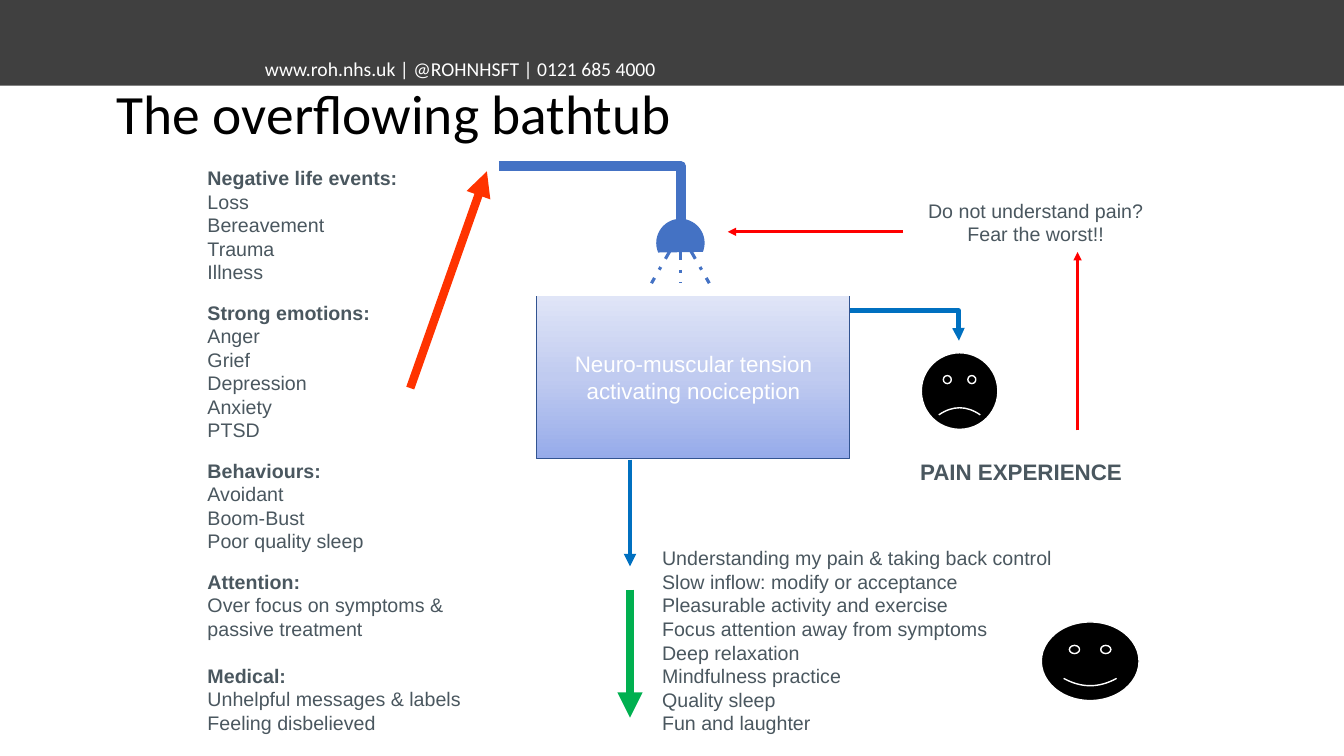
"""Build the overflowing bathtub slide about pain, its causes and its relief."""
import pptx
import pptx.dml.color
import pptx.enum.dml
import pptx.enum.shapes
import pptx.enum.text
import pptx.oxml.ns
import pptx.util
import copy
import itertools
import lxml.etree

THEME = {
    "colours": {
        "band": "404040", "white": "FFFFFF", "black": "000000", "slate": "4A575F",
        "shower": "4472C4", "water": "0070C0", "fear": "FF0000", "inflow": "FF3300",
        "relief": "00B050", "tub edge": "325491",
    },
    "tub": ["96ABEA", "C0CBF0", "E0E5F7"],
    "type": {
        "title": {"name": "Calibri", "size": pptx.util.Pt(39.6), "bold": False},
        "contact": {"name": "Calibri", "size": pptx.util.Pt(14), "bold": False},
        "label": {"name": "Arial", "size": pptx.util.Pt(16), "bold": False},
        "strong label": {"name": "Arial", "size": pptx.util.Pt(16), "bold": True},
        "body": {"name": "Arial", "size": pptx.util.Pt(14), "bold": False},
        "heading": {"name": "Arial", "size": pptx.util.Pt(14), "bold": True},
    },
}
COLOUR = {part: pptx.dml.color.RGBColor.from_string(code)
          for part, code in THEME["colours"].items()}
SHAPE = pptx.enum.shapes.MSO_SHAPE
CONNECTOR = pptx.enum.shapes.MSO_CONNECTOR
ALIGN = pptx.enum.text.PP_ALIGN
ANCHOR = pptx.enum.text.MSO_ANCHOR
qn = pptx.oxml.ns.qn

deck = pptx.Presentation()
deck.slide_width = pptx.util.Inches(13.33)
deck.slide_height = pptx.util.Inches(7.5)
COLUMN, ROW = deck.slide_width / 40, deck.slide_height / 30
slide = deck.slides.add_slide(deck.slide_layouts[6])


def on_grid(*places):
    """Turn alternating columns and rows into lengths."""
    return [pptx.util.Emu(round(place * unit))
            for place, unit in zip(places, itertools.cycle((COLUMN, ROW)))]


def write(frame, rows, colour, layout):
    """Fill a frame with rows of wording, type style and space before."""
    frame.word_wrap = True
    for number, (wording, style, gap) in enumerate(rows):
        paragraph = frame.paragraphs[0] if number == 0 else frame.add_paragraph()
        paragraph.text = wording
        for key, value in {"space_before": pptx.util.Pt(gap), **layout}.items():
            setattr(paragraph, key, value)
        for key, value in THEME["type"][style].items():
            setattr(paragraph.font, key, value)
        paragraph.font.color.rgb = COLOUR[colour]


SOLIDS = [
    (SHAPE.RECTANGLE, (0, 0, 40, 3.4), "band", None, 0, None),
    (SHAPE.SMILEY_FACE, (27.42, 14, 2.28, 3.04), "black", "white", 0, -0.047),
    (SHAPE.SMILEY_FACE, (30.99, 24.68, 2.91, 3.12), "black", "white", 0, None),
    (SHAPE.CHORD, (19.53, 8.68, 1.44, 1.92), "shower", None, 111.7, None),
]
for kind, place, fill, edge, turn, smile in SOLIDS:
    solid = slide.shapes.add_shape(kind, *on_grid(*place))
    solid.shadow.inherit = False
    solid.rotation = turn
    solid.fill.solid()
    solid.fill.fore_color.rgb = COLOUR[fill]
    if edge:
        solid.line.color.rgb = COLOUR[edge]
        solid.line.width = pptx.util.Pt(1)
    else:
        solid.line.fill.background()
    if smile is not None:
        solid.adjustments[0] = smile

TUB_LEFT, TUB_TOP, TUB_RIGHT, TUB_BOTTOM = on_grid(15.96, 11.74, 25.29, 18.2)
outline = slide.shapes.build_freeform(TUB_RIGHT, TUB_TOP)
outline.add_line_segments(
    [(TUB_RIGHT, TUB_BOTTOM), (TUB_LEFT, TUB_BOTTOM), (TUB_LEFT, TUB_TOP)], close=False)
tub = outline.convert_to_shape()
tub.shadow.inherit = False
tub.line.color.rgb = COLOUR["tub edge"]
tub.line.width = pptx.util.Pt(1)
tub.fill.gradient()
tub.fill.gradient_angle = 90
stops = tub._element.spPr.find(qn("a:gradFill")).find(qn("a:gsLst"))
stops.insert(1, copy.deepcopy(stops[0]))
for number, (stop, code) in enumerate(zip(tub.fill.gradient_stops, THEME["tub"])):
    stop.color.rgb = pptx.dml.color.RGBColor.from_string(code)
    stop.position = number / 2

pain = slide.shapes.add_shape(SHAPE.RECTANGLE, *on_grid(26.88, 17.96, 7.02, 1.48))
pain.shadow.inherit = False
pain.fill.background()
pain.line.color.rgb = COLOUR["white"]
pain.line.width = pptx.util.Pt(1.5)
write(pain.text_frame, [("PAIN EXPERIENCE", "strong label", 0)], "slate",
      {"alignment": ALIGN.CENTER})

CAUSES = [
    ("Negative life events:", 0, ["Loss", "Bereavement", "Trauma", "Illness"]),
    ("Strong emotions:", 12, ["Anger", "Grief", "Depression", "Anxiety", "PTSD"]),
    ("Behaviours:", 12, ["Avoidant", "Boom-Bust", "Poor quality sleep"]),
    ("Attention:", 12, ["Over focus on symptoms & passive treatment"]),
    ("Medical:", 16.8, ["Unhelpful messages & labels", "Feeling disbelieved"]),
]
cause_rows = []
for heading, gap, examples in CAUSES:
    cause_rows.append((heading, "heading", gap))
    cause_rows += [(example, "body", 0) for example in examples]

COPING = [
    "Understanding my pain & taking back control", "Slow inflow: modify or acceptance",
    "Pleasurable activity and exercise", "Focus attention away from symptoms",
    "Deep relaxation", "Mindfulness practice", "Quality sleep", "Fun and laughter",
]
DOUBTS = ["Do not understand pain?", "Fear the worst!!"]
LEFT, CENTRE = {"alignment": ALIGN.LEFT}, {"alignment": ALIGN.CENTER}
TEXTS = [
    ((7.59, 2.08, 12.39, 1.36), ANCHOR.TOP, "white", LEFT,
     [("www.roh.nhs.uk | @ROHNHSFT | 0121 685 4000", "contact", 0)]),
    ((3.18, 3.24, 26.22, 2.8), ANCHOR.MIDDLE, "black", {**LEFT, "line_spacing": 0.9},
     [("The overflowing bathtub", "title", 0)]),
    ((15.99, 13.68, 9.3, 2.56), ANCHOR.MIDDLE, "white", CENTRE,
     [("Neuro-muscular tension activating nociception", "label", 0)]),
    ((27.24, 7.68, 7.17, 2.28), ANCHOR.TOP, "slate", CENTRE,
     [(doubt, "body", 0) for doubt in DOUBTS]),
    ((5.88, 6.4, 8.97, 23.56), ANCHOR.TOP, "slate", LEFT, cause_rows),
    ((19.41, 21.48, 14.46, 7.96), ANCHOR.TOP, "slate", LEFT,
     [(step, "body", 0) for step in COPING]),
]
for place, anchor, colour, layout, rows in TEXTS:
    frame = slide.shapes.add_textbox(*on_grid(*place)).text_frame
    frame.vertical_anchor = anchor
    write(frame, rows, colour, layout)

SPRAY_X = 20.25
FLOWS = [
    ((14.85, 6.6, 20.19, 9.4), "shower", 7, False, False, 101500),
    ((18.75, 18.24, 18.75, 22.48), "water", 3, True, False, None),
    ((25.29, 12.32, 28.54, 13.52), "water", 3, True, False, 99600),
    ((32.07, 17.08, 32.07, 10), "fear", 2, True, False, None),
    ((26.88, 9.2, 21.66, 9.2), "fear", 2, True, False, None),
    ((12.21, 15.4, 14.49, 6.8), "inflow", 6, True, False, None),
    ((18.75, 23.4, 18.75, 28.48), "relief", 6, True, False, None),
]
for side in (-1, 0, 1):
    FLOWS.append(((SPRAY_X + side * 0.26, 9.84, SPRAY_X + side * 0.86, 11.24),
                  "shower", 2.25, False, True, None))
for ends, colour, weight, has_head, dashed, bend in FLOWS:
    kind = CONNECTOR.ELBOW if bend else CONNECTOR.STRAIGHT
    flow = slide.shapes.add_connector(kind, *on_grid(*ends))
    flow.line.color.rgb = COLOUR[colour]
    flow.line.width = pptx.util.Pt(weight)
    if dashed:
        flow.line.dash_style = pptx.enum.dml.MSO_LINE.DASH_DOT
    properties = flow._element.spPr
    if has_head:
        lxml.etree.SubElement(properties.find(qn("a:ln")), qn("a:tailEnd"), type="triangle")
    if bend:
        guides = properties.find(qn("a:prstGeom")).find(qn("a:avLst"))
        lxml.etree.SubElement(guides, qn("a:gd"), name="adj1", fmla=f"val {bend}")
    lxml.etree.SubElement(properties, qn("a:effectLst"))

deck.save("out.pptx")
